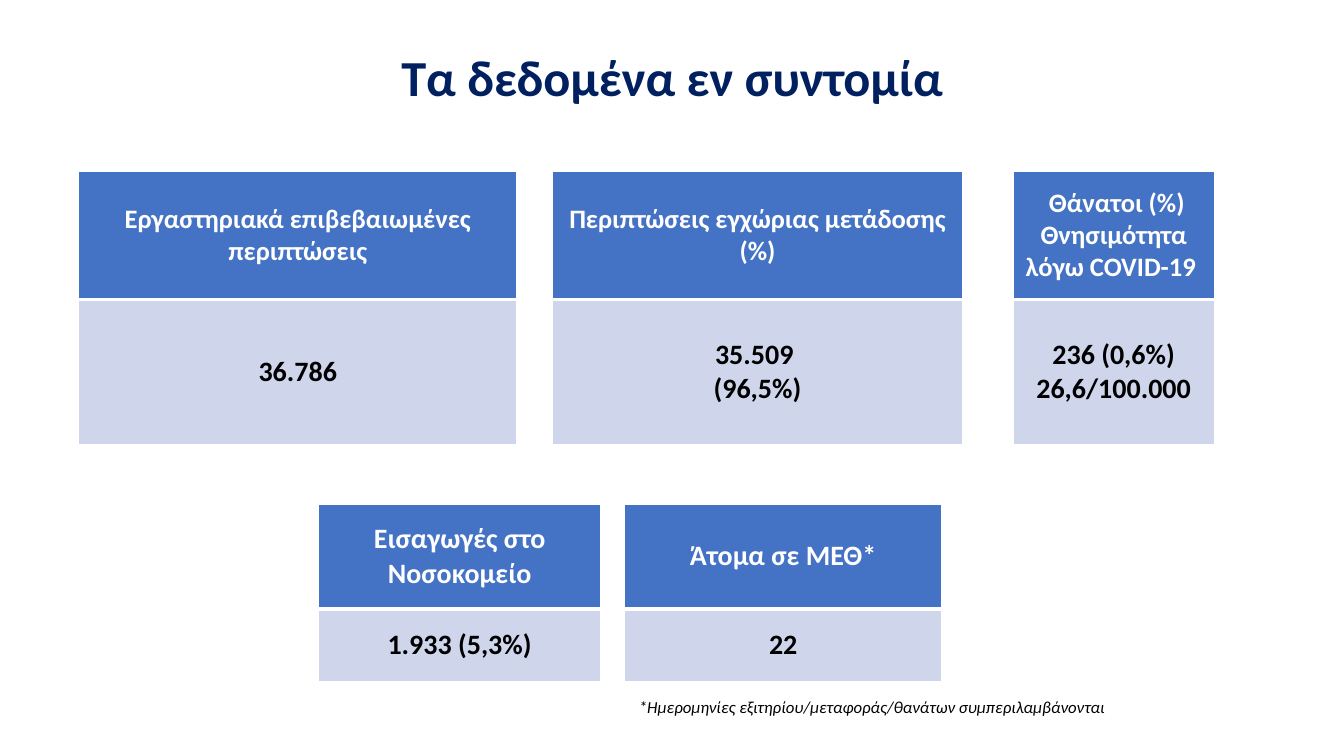
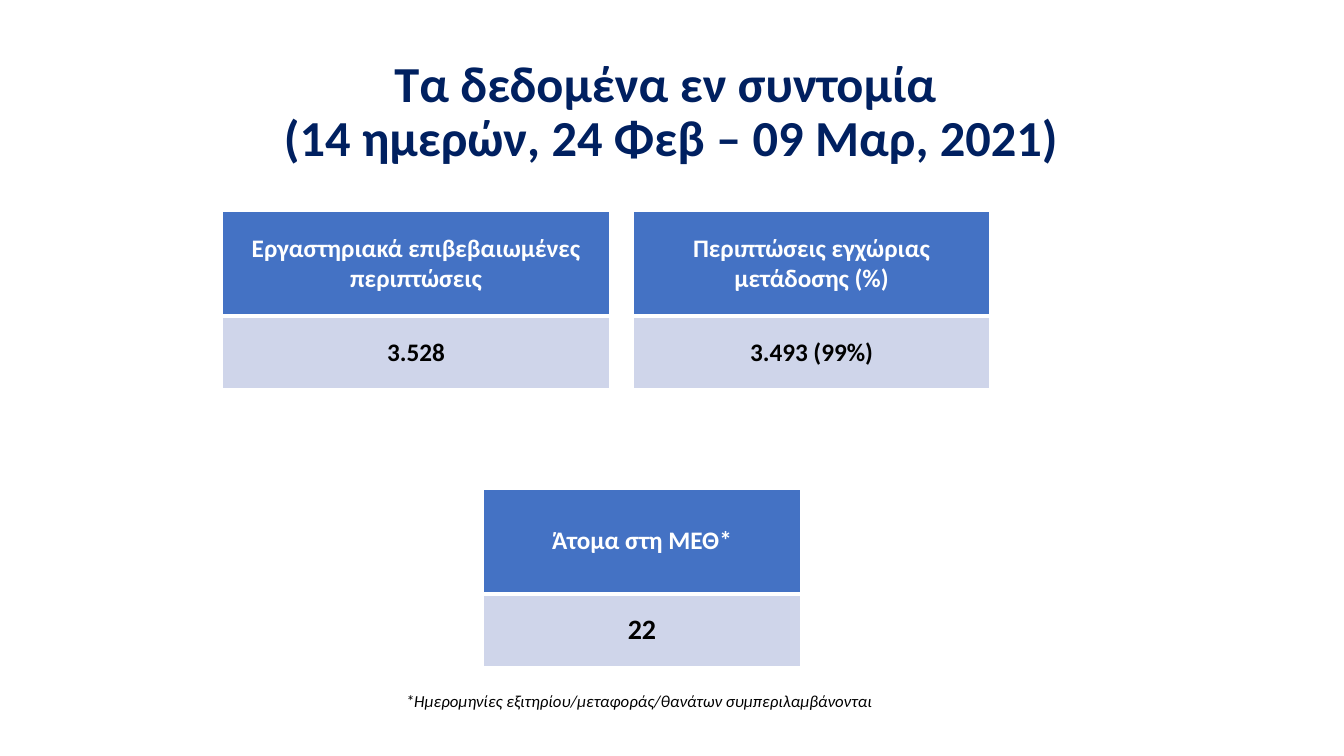
"""Build two slides that summarise case data in tables."""
import pptx
import pptx.dml.color
import pptx.enum.text
import pptx.oxml
import pptx.oxml.ns
import pptx.util

Cm = pptx.util.Cm
Pt = pptx.util.Pt
RGBColor = pptx.dml.color.RGBColor
ALIGN = pptx.enum.text.PP_ALIGN
ANCHOR = pptx.enum.text.MSO_ANCHOR
AUTO_SIZE = pptx.enum.text.MSO_AUTO_SIZE

NAVY = RGBColor(0x00, 0x20, 0x60)
BLUE = RGBColor(0x44, 0x72, 0xC4)
PALE_BLUE = RGBColor(0xCF, 0xD5, 0xEA)
WHITE = RGBColor(0xFF, 0xFF, 0xFF)
BLACK = RGBColor(0x00, 0x00, 0x00)

TITLE_FONT = {"name": "Calibri", "size": Pt(36), "bold": True}
CELL_FONT = {"name": "Calibri", "bold": True}
NOTE_FONT = {"name": "Calibri", "size": Pt(12), "italic": True}
TITLE_PARAGRAPH = {"alignment": ALIGN.CENTER, "line_spacing": 0.9}
CELL_PARAGRAPH = {"alignment": ALIGN.CENTER}
NOTE_PARAGRAPH = {"alignment": ALIGN.LEFT}
TITLE_FRAME = {"word_wrap": True, "vertical_anchor": ANCHOR.MIDDLE}
NOTE_FRAME = {"word_wrap": False, "auto_size": AUTO_SIZE.SHAPE_TO_FIT_TEXT}

ROW_STYLES = [
    {"fill": BLUE, "color": WHITE, "borders": {"L": 1, "R": 1, "T": 1, "B": 3}},
    {"fill": PALE_BLUE, "color": BLACK, "borders": {"L": 1, "R": 1, "T": 1, "B": 1}},
]
GAP = 0.58
LOW_ROWS = [2.64, 1.83]
NOTE = "*Ημερομηνίες εξιτηρίου/μεταφοράς/θανάτων συμπεριλαμβάνονται"

SLIDES = [
    {
        "title": "Τα δεδομένα εν συντομία",
        "title_box": (2.34, 1.02, 29.21, 1.98),
        "note_box": (15.85, 17.42, 12.37, 0.76),
        "tables": [
            {
                "position": (1.98, 4.32),
                "columns": [11.05, 0.89, 10.34, GAP, 0.66, 5.08, 1.32],
                "rows": [3.23, 3.66],
                "sizes": [19, 20],
                "texts": {
                    0: ("Εργαστηριακά επιβεβαιωμένες περιπτώσεις", "36.786"),
                    2: ("Περιπτώσεις εγχώριας μετάδοσης (%)", "35.509 \n(96,5%)"),
                    5: (" Θάνατοι (%)\nΘνησιμότητα\nλόγω COVID-19 ",
                        "236 (0,6%)\n26,6/100.000"),
                },
            },
            {
                "position": (8.03, 12.7),
                "columns": [7.11, GAP, 7.98],
                "rows": LOW_ROWS,
                "sizes": [20, 20],
                "texts": {
                    0: ("Εισαγωγές στο Νοσοκομείο", "1.933 (5,3%)"),
                    2: ("Άτομα σε ΜΕΘ*", "22"),
                },
            },
        ],
    },
    {
        "title": "Τα δεδομένα εν συντομία \v(14 ημερών, 24 Φεβ – 09 Μαρ, 2021)",
        "title_box": (0.94, 1.02, 31.95, 3.68),
        "note_box": (9.98, 17.27, 12.37, 0.76),
        "tables": [
            {
                "position": (5.61, 5.33),
                "columns": [9.75, GAP, 8.97, GAP, GAP, 0.66],
                "rows": LOW_ROWS,
                "sizes": [18, 18],
                "texts": {
                    0: ("Εργαστηριακά επιβεβαιωμένες περιπτώσεις", "3.528"),
                    2: ("Περιπτώσεις εγχώριας μετάδοσης (%)", "3.493 (99%)"),
                },
            },
            {
                "position": (11.58, 12.32),
                "columns": [GAP, 7.98],
                "rows": LOW_ROWS,
                "sizes": [18, 20],
                "texts": {1: ("Άτομα στη ΜΕΘ*", "22")},
            },
        ],
    },
]


def write_text(text_frame, text, font_format, paragraph_format, color):
    text_frame.text = text
    for paragraph in text_frame.paragraphs:
        for name, value in paragraph_format.items():
            setattr(paragraph, name, value)
        for run in paragraph.runs:
            for name, value in font_format.items():
                setattr(run.font, name, value)
            run.font.color.rgb = color


def set_borders(cell, borders):
    properties = cell._tc.get_or_add_tcPr()
    for side, width in borders.items():
        properties.append(pptx.oxml.parse_xml(
            f'<a:ln{side} {pptx.oxml.ns.nsdecls("a")} w="{Pt(width)}">'
            f'<a:solidFill><a:srgbClr val="{WHITE}"/></a:solidFill></a:ln{side}>'
        ))


presentation = pptx.Presentation()
presentation.slide_width = Cm(33.87)
presentation.slide_height = Cm(19.05)

for content in SLIDES:
    slide = presentation.slides.add_slide(presentation.slide_layouts[6])

    for text, box, frame_format, font_format, paragraph_format, color in [
        (content["title"], content["title_box"], TITLE_FRAME, TITLE_FONT, TITLE_PARAGRAPH, NAVY),
        (NOTE, content["note_box"], NOTE_FRAME, NOTE_FONT, NOTE_PARAGRAPH, BLACK),
    ]:
        text_frame = slide.shapes.add_textbox(*map(Cm, box)).text_frame
        for name, value in frame_format.items():
            setattr(text_frame, name, value)
        write_text(text_frame, text, font_format, paragraph_format, color)

    for data in content["tables"]:
        columns, rows = data["columns"], data["rows"]
        left, top = data["position"]
        table = slide.shapes.add_table(
            len(rows), len(columns), Cm(left), Cm(top), Cm(sum(columns)), Cm(sum(rows))
        ).table
        for column, width in zip(table.columns, columns):
            column.width = Cm(width)
        for row_index, style in enumerate(ROW_STYLES):
            row = table.rows[row_index]
            row.height = Cm(rows[row_index])
            font_format = {**CELL_FONT, "size": Pt(data["sizes"][row_index])}
            for column_index, cell in enumerate(row.cells):
                set_borders(cell, style["borders"])
                cell.fill.solid()
                cell.fill.fore_color.rgb = WHITE
                if column_index in data["texts"]:
                    cell.fill.fore_color.rgb = style["fill"]
                    cell.vertical_anchor = ANCHOR.MIDDLE
                    write_text(cell.text_frame, data["texts"][column_index][row_index],
                               font_format, CELL_PARAGRAPH, style["color"])

presentation.save("out.pptx")
